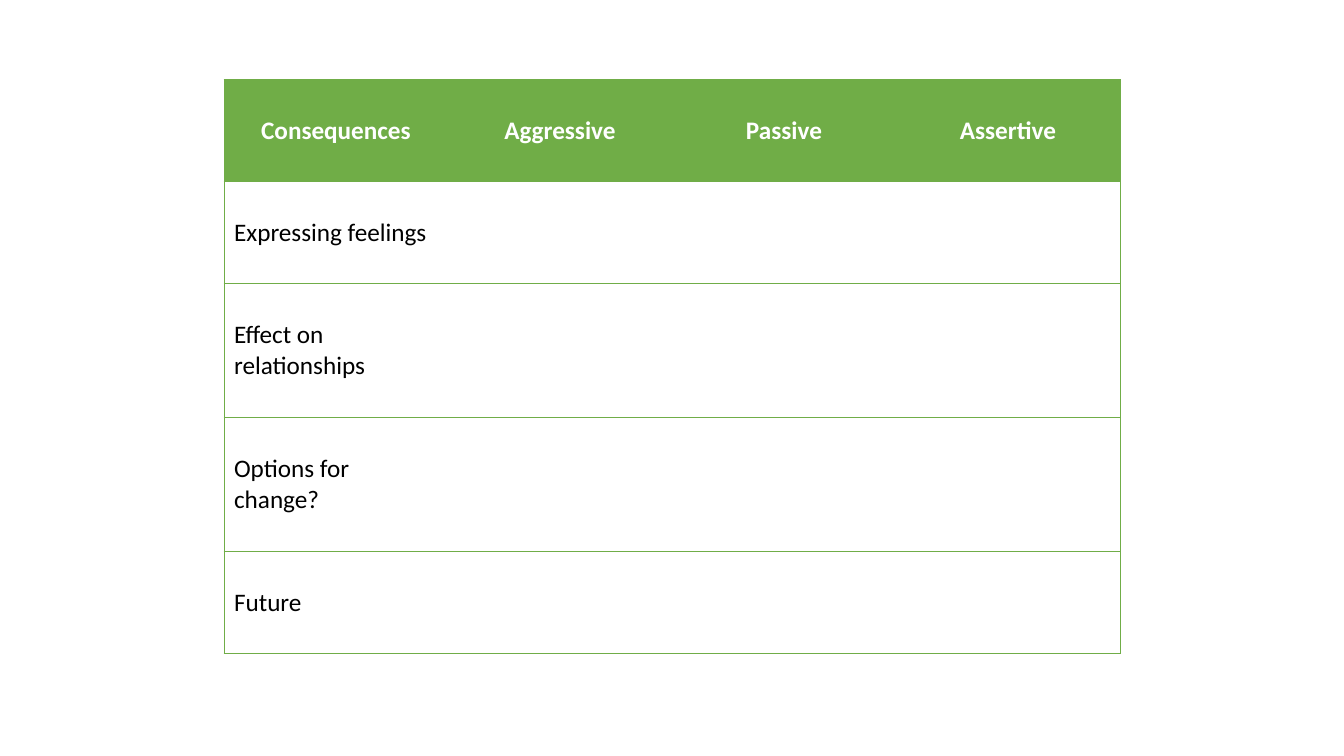
"""Build a slide with a table comparing the consequences of three styles."""
from dataclasses import dataclass

from lxml.etree import SubElement
from pptx import Presentation
from pptx.dml.color import RGBColor
from pptx.enum.text import MSO_ANCHOR as Anchor, PP_ALIGN as Align
from pptx.oxml.ns import qn
from pptx.table import Table, _Cell as Cell
from pptx.util import Inches, Pt

SLIDE_WIDTH, SLIDE_HEIGHT = Inches(13.33), Inches(7.5)
TABLE_LEFT, TABLE_TOP, TABLE_WIDTH = 1 / 6, 0.105, 2 / 3
LINE_HEIGHT = 0.0425
BASE_HEIGHT = 0.0925
GREEN, WHITE, BLACK = "70AD47", "FFFFFF", "000000"
HEADINGS = ("Consequences", "Aggressive", "Passive", "Assertive")


@dataclass(frozen=True)
class RowStyle:
    """Look shared by the cells of a row."""

    fill: str
    text: str
    bold: bool
    align: Align


@dataclass(frozen=True)
class Row:
    """Texts of a row and the number of lines it holds."""

    texts: tuple[str, ...]
    style: RowStyle
    lines: int = 1


HEADER = RowStyle(GREEN, WHITE, True, Align.CENTER)
BODY = RowStyle(WHITE, BLACK, False, Align.LEFT)
ROWS = (
    Row(HEADINGS, HEADER),
    Row(("Expressing feelings",), BODY),
    Row(("Effect on relationships",), BODY, lines=2),
    Row(("Options for change?",), BODY, lines=2),
    Row(("Future",), BODY),
)


def color(value: str) -> RGBColor:
    """Turn a hex string into a colour."""
    return RGBColor.from_string(value)


def draw_borders(cell: Cell, visible: dict[str, bool]) -> None:
    """Rule the visible sides of a cell and clear the others."""
    properties = cell._tc.get_or_add_tcPr()
    for side, shown in visible.items():
        line = SubElement(properties, qn(f"a:ln{side}"), w=str(Pt(0.5)))
        if shown:
            fill = SubElement(line, qn("a:solidFill"))
            SubElement(fill, qn("a:srgbClr"), val=GREEN)
        else:
            SubElement(line, qn("a:noFill"))


def fill_cell(cell: Cell, text: str, style: RowStyle) -> None:
    """Write and colour one cell."""
    cell.fill.solid()
    cell.fill.fore_color.rgb = color(style.fill)
    cell.vertical_anchor = Anchor.MIDDLE
    cell.text = text
    paragraph = cell.text_frame.paragraphs[0]
    paragraph.alignment = style.align
    font = paragraph.font
    font.name, font.size, font.bold = "Calibri", Pt(18), style.bold
    font.color.rgb = color(style.text)


def draw_row(table: Table, index: int, row: Row) -> None:
    """Set the height of a row and draw its cells."""
    table.rows[index].height = int(SLIDE_HEIGHT * (BASE_HEIGHT + LINE_HEIGHT * row.lines))
    last = len(HEADINGS) - 1
    for column, cell in enumerate(table.rows[index].cells):
        text = row.texts[column] if column < len(row.texts) else ""
        draw_borders(cell, {"L": column == 0, "R": column == last, "T": True, "B": True})
        fill_cell(cell, text, row.style)


def main() -> None:
    """Create the presentation and save it."""
    presentation = Presentation()
    presentation.slide_width, presentation.slide_height = SLIDE_WIDTH, SLIDE_HEIGHT
    slide = presentation.slides.add_slide(presentation.slide_layouts[6])
    height = sum(BASE_HEIGHT + LINE_HEIGHT * row.lines for row in ROWS)
    table = slide.shapes.add_table(
        len(ROWS), len(HEADINGS),
        int(SLIDE_WIDTH * TABLE_LEFT), int(SLIDE_HEIGHT * TABLE_TOP),
        int(SLIDE_WIDTH * TABLE_WIDTH), int(SLIDE_HEIGHT * height),
    ).table
    table.horz_banding = False
    for index, row in enumerate(ROWS):
        draw_row(table, index, row)
    presentation.save("out.pptx")


if __name__ == "__main__":
    main()
